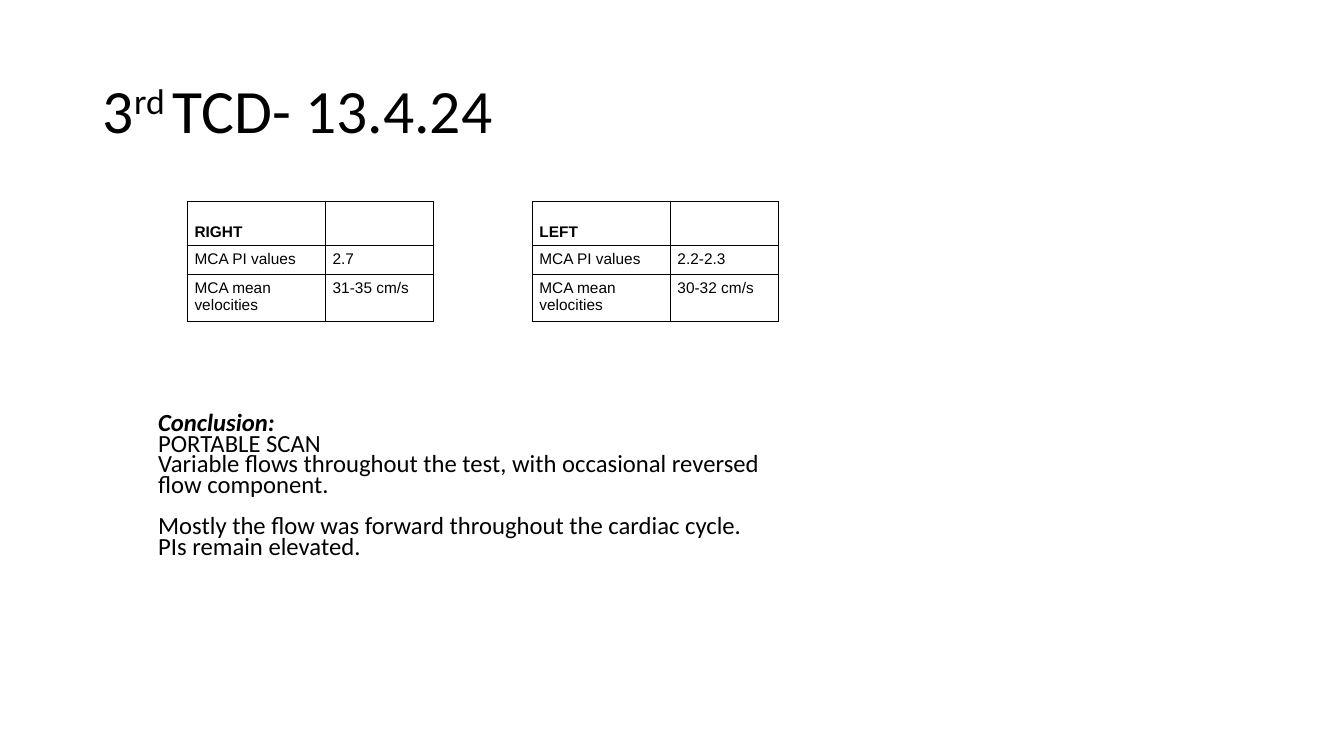
from dataclasses import dataclass

import pptx
import pptx.dml.color
import pptx.enum.text
import pptx.oxml
import pptx.oxml.ns
import pptx.slide
import pptx.table
import pptx.text.text
import pptx.util
from pptx.util import Inches

BLACK = "000000"
WHITE = "FFFFFF"
COLUMN_WIDTHS = (1.37, 1.07)
ROW_HEIGHTS = (0.44, 0.27, 0.45)


@dataclass
class SideReading:
    side: str
    left: float
    pulsatility: str
    velocity: str


@dataclass
class ConclusionLine:
    text: str
    emphasis: bool = False
    space_before: float = 0


READINGS = (
    SideReading("RIGHT", 1.86, "2.7", "31-35 cm/s"),
    SideReading("LEFT", 5.28, "2.2-2.3", "30-32 cm/s"),
)
CONCLUSION = (
    ConclusionLine("Conclusion:", emphasis=True),
    ConclusionLine("PORTABLE SCAN"),
    ConclusionLine("Variable flows throughout the test, with occasional reversed flow component."),
    ConclusionLine("Mostly the flow was forward throughout the cardiac cycle.", space_before=14.8),
    ConclusionLine("PIs remain elevated."),
)


def color(value: str) -> pptx.dml.color.RGBColor:
    return pptx.dml.color.RGBColor.from_string(value)


def format_font(font: pptx.text.text.Font, name: str, size: float,
                bold: bool = False, italic: bool = False) -> None:
    font.name = name
    font.size = pptx.util.Pt(size)
    font.bold = bold
    font.italic = italic
    font.color.rgb = color(BLACK)


def add_borders(cell: pptx.table._Cell) -> None:
    properties = cell._tc.get_or_add_tcPr()
    for position, side in enumerate(("lnL", "lnR", "lnT", "lnB")):
        border = pptx.oxml.parse_xml(
            f'<a:{side} {pptx.oxml.ns.nsdecls("a")} w="9525"><a:solidFill>'
            f'<a:srgbClr val="{BLACK}"/></a:solidFill></a:{side}>')
        properties.insert(position, border)


def add_title(slide: pptx.slide.Slide) -> None:
    title = slide.shapes.title
    title.left, title.top = Inches(0.92), Inches(0.4)
    title.width, title.height = Inches(11.5), Inches(1.45)
    frame = title.text_frame
    frame.auto_size = pptx.enum.text.MSO_AUTO_SIZE.NONE
    frame.vertical_anchor = pptx.enum.text.MSO_ANCHOR.MIDDLE
    paragraph = frame.paragraphs[0]
    paragraph.alignment = pptx.enum.text.PP_ALIGN.LEFT
    paragraph.line_spacing = 0.9
    for text in ("3", "rd ", "TCD- 13.4.24"):
        run = paragraph.add_run()
        run.text = text
        format_font(run.font, "Calibri", 44)
    # Raise the ordinal suffix
    paragraph.runs[1].font._element.set("baseline", "30000")


def add_reading_table(slide: pptx.slide.Slide, reading: SideReading) -> None:
    rows = (
        (reading.side, ""),
        ("MCA PI values", reading.pulsatility),
        ("MCA mean velocities", reading.velocity),
    )
    table = slide.shapes.add_table(
        len(ROW_HEIGHTS), len(COLUMN_WIDTHS), Inches(reading.left), Inches(2),
        Inches(sum(COLUMN_WIDTHS)), Inches(sum(ROW_HEIGHTS))).table
    table.first_row = False
    table.horz_banding = False
    for column, width in zip(table.columns, COLUMN_WIDTHS):
        column.width = Inches(width)
    for row_index, (row, height) in enumerate(zip(table.rows, ROW_HEIGHTS)):
        row.height = Inches(height)
        for cell, text in zip(row.cells, rows[row_index]):
            is_header = row_index == 0
            cell.text = text
            cell.margin_left = cell.margin_right = Inches(0.07)
            cell.margin_top = cell.margin_bottom = Inches(0.05)
            cell.vertical_anchor = (pptx.enum.text.MSO_ANCHOR.BOTTOM if is_header
                                    else pptx.enum.text.MSO_ANCHOR.TOP)
            format_font(cell.text_frame.paragraphs[0].font, "Arial", 11, bold=is_header)
            for run in cell.text_frame.paragraphs[0].runs:
                format_font(run.font, "Arial", 11, bold=is_header)
            cell.fill.solid()
            cell.fill.fore_color.rgb = color(WHITE)
            add_borders(cell)


def add_conclusion(slide: pptx.slide.Slide) -> None:
    box = slide.shapes.add_textbox(Inches(1.47), Inches(3.92), Inches(6.38), Inches(1.83))
    frame = box.text_frame
    frame.word_wrap = True
    frame.vertical_anchor = pptx.enum.text.MSO_ANCHOR.MIDDLE
    frame.text = "\n".join(line.text for line in CONCLUSION)
    for paragraph, line in zip(frame.paragraphs, CONCLUSION):
        paragraph.line_spacing = 0.7
        paragraph.space_before = pptx.util.Pt(line.space_before)
        format_font(paragraph.runs[0].font, "Calibri", 17.6,
                    bold=line.emphasis, italic=line.emphasis)


def main() -> None:
    presentation = pptx.Presentation()
    presentation.slide_width = Inches(13.33)
    presentation.slide_height = Inches(7.5)
    title_only = presentation.slide_layouts.get_by_name("Title Only")
    slide = presentation.slides.add_slide(title_only)

    add_title(slide)
    add_conclusion(slide)
    for reading in READINGS:
        add_reading_table(slide, reading)

    presentation.save("out.pptx")


if __name__ == "__main__":
    main()
